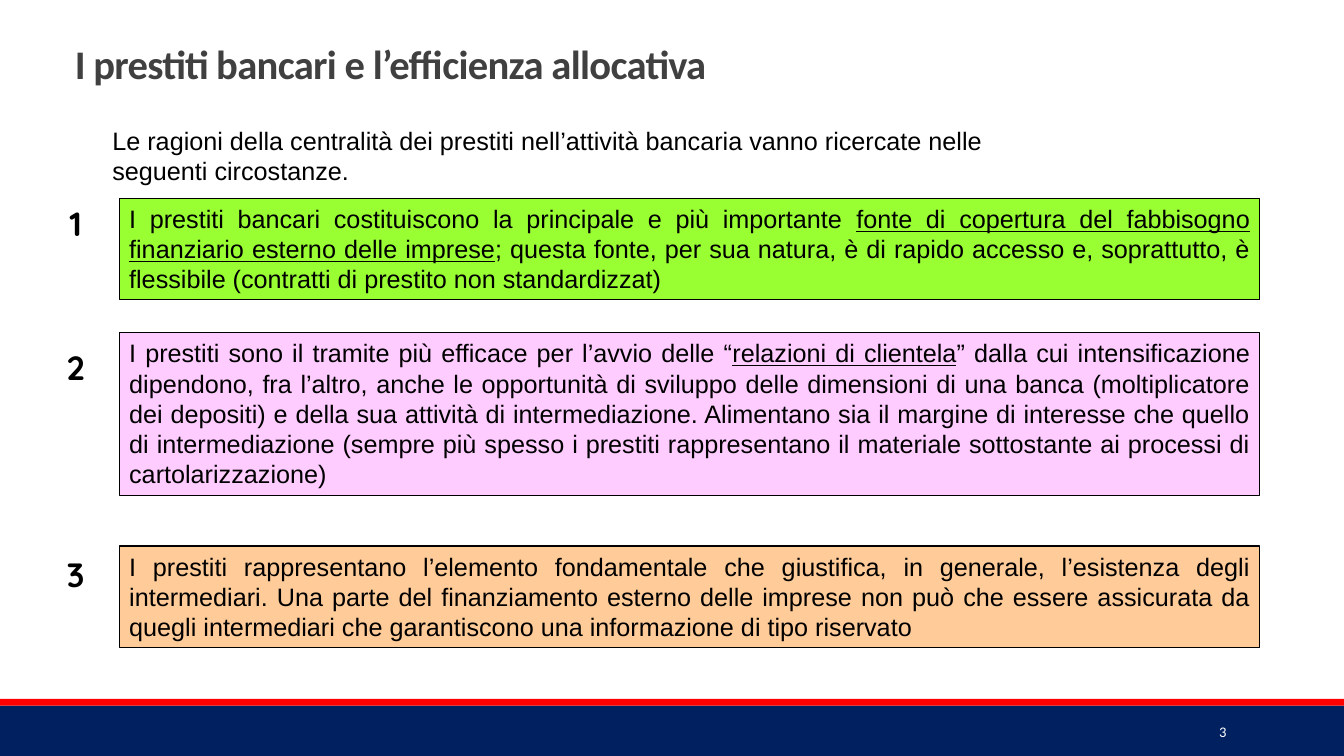
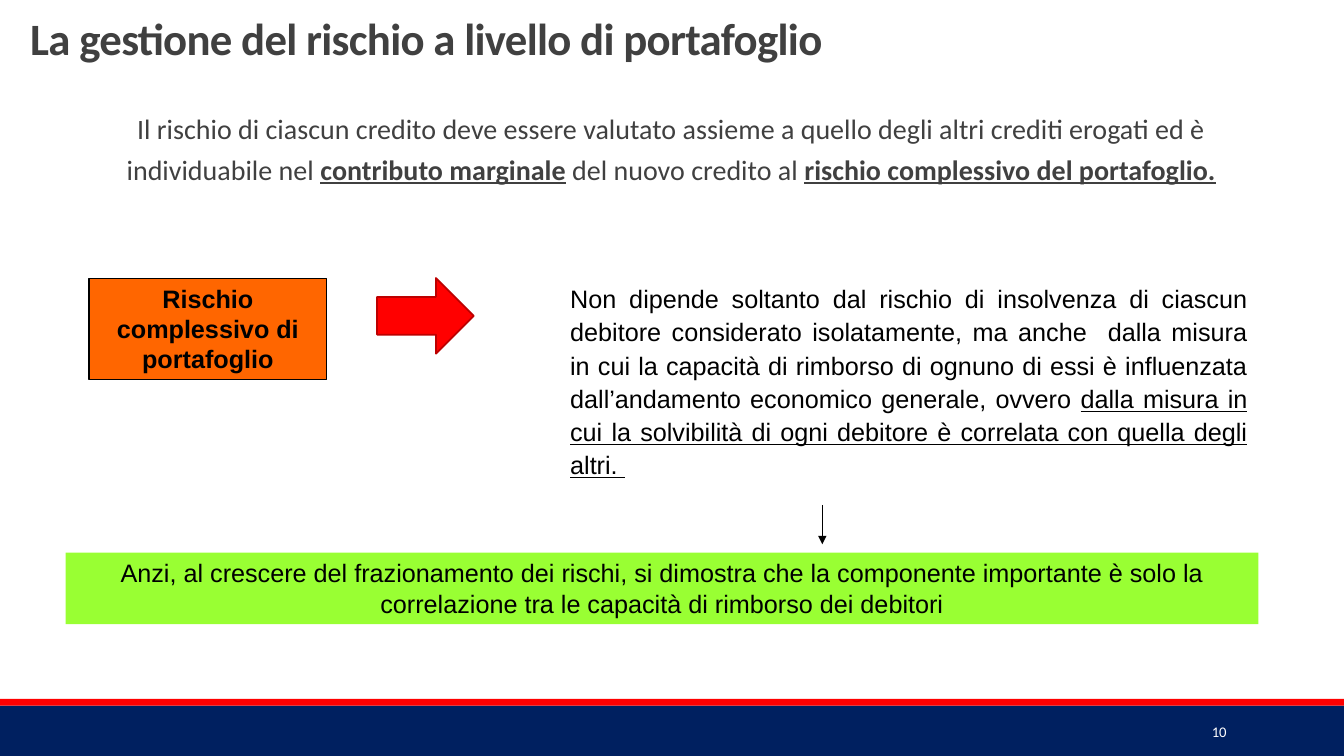
"""Build two slides on bank lending and portfolio risk."""
from dataclasses import dataclass
from typing import Optional

from lxml.etree import SubElement
from pptx import Presentation
from pptx.dml.color import RGBColor
from pptx.enum.shapes import MSO_CONNECTOR, MSO_SHAPE
from pptx.enum.text import MSO_ANCHOR, MSO_AUTO_SIZE, PP_ALIGN
from pptx.oxml.ns import qn
from pptx.slide import Slide
from pptx.text.text import TextFrame
from pptx.util import Inches, Length, Pt

COLUMNS, ROWS = 160, 90
CELLS_PER_INCH = 12
NAVY, RED, DARK_RED = "002060", "FF0000", "BD0000"
GREEN, PINK, PEACH, ORANGE = "99FF33", "FFCCFF", "FFCC99", "FF6600"
BLACK, WHITE, GREY = "000000", "FFFFFF", "404040"


@dataclass(frozen=True)
class Area:
    column: float
    row: float
    columns: float
    rows: float

    def box(self) -> tuple[Length, ...]:
        return tuple(map(cells, (self.column, self.row, self.columns, self.rows)))


@dataclass(frozen=True)
class Span:
    text: str
    underline: bool = False
    bold: bool = False


@dataclass(frozen=True)
class TextStyle:
    size: float = 18
    font: str = "Arial"
    colour: str = BLACK
    bold: bool = False
    align: PP_ALIGN = PP_ALIGN.LEFT
    spacing: float = 1
    anchor: MSO_ANCHOR = MSO_ANCHOR.TOP
    tracking: float = 0


@dataclass(frozen=True)
class Reason:
    row: float
    rows: float
    number_row: float
    fill: str
    spans: tuple[Span, ...]


JUSTIFIED = TextStyle(align=PP_ALIGN.JUSTIFY)
CENTRED = TextStyle(align=PP_ALIGN.CENTER)
NUMERAL = TextStyle(24, "Quicksand", bold=True, align=PP_ALIGN.CENTER)
PAGE_NUMBER = TextStyle(10.5, "Calibri", WHITE, align=PP_ALIGN.RIGHT,
                        anchor=MSO_ANCHOR.MIDDLE)

REASONS = (
    Reason(23.6, 12.1, 23.6, GREEN, (
        Span("I prestiti bancari costituiscono la principale e più importante "),
        Span("fonte di copertura del fabbisogno finanziario esterno delle imprese",
             underline=True),
        Span("; questa fonte, per sua natura, è di rapido accesso e, soprattutto, "
             "è flessibile (contratti di prestito non standardizzat)"))),
    Reason(39.6, 19.4, 40.7, PINK, (
        Span("I prestiti sono il tramite più efficace per l’avvio delle “"),
        Span("relazioni di clientela", underline=True),
        Span("” dalla cui intensificazione dipendono, fra l’altro, anche le "
             "opportunità di sviluppo delle dimensioni di una banca (moltiplicatore "
             "dei depositi) e della sua attività di intermediazione. Alimentano sia "
             "il margine di interesse che quello di intermediazione (sempre più "
             "spesso i prestiti rappresentano il materiale sottostante ai processi "
             "di cartolarizzazione)"))),
    Reason(65, 12.1, 65.3, PEACH, (
        Span("I prestiti rappresentano l’elemento fondamentale che giustifica, in "
             "generale, l’esistenza degli intermediari. Una parte del finanziamento "
             "esterno delle imprese non può che essere assicurata da quegli "
             "intermediari che garantiscono una informazione di tipo riservato"),)),
)


def cells(count: float) -> Length:
    return Inches(count / CELLS_PER_INCH)


def rgb(colour: str) -> RGBColor:
    return RGBColor.from_string(colour)


def write(frame: TextFrame, spans: tuple[Span, ...], style: TextStyle) -> None:
    frame.word_wrap = True
    frame.vertical_anchor = style.anchor
    paragraph = frame.paragraphs[0]
    paragraph.alignment = style.align
    paragraph.line_spacing = style.spacing
    for span in spans:
        run = paragraph.add_run()
        run.text = span.text
        font = run.font
        font.size = Pt(style.size)
        font.name = style.font
        font.color.rgb = rgb(style.colour)
        font.bold = style.bold or span.bold
        font.underline = span.underline
        if style.tracking:
            font._element.set("spc", str(round(style.tracking * 100)))


def add_text(slide: Slide, area: Area, style: TextStyle, *spans: Span) -> None:
    write(slide.shapes.add_textbox(*area.box()).text_frame, spans, style)


def add_panel(slide: Slide, area: Area, fill: str, outline: Optional[str] = None,
              weight: float = 0.75, kind: MSO_SHAPE = MSO_SHAPE.RECTANGLE,
              style: TextStyle = CENTRED, spans: tuple[Span, ...] = ()):
    panel = slide.shapes.add_shape(kind, *area.box())
    panel.shadow.inherit = False
    panel.fill.solid()
    panel.fill.fore_color.rgb = rgb(fill)
    if outline:
        panel.line.color.rgb = rgb(outline)
        panel.line.width = Pt(weight)
    else:
        panel.line.fill.background()
    if spans:
        write(panel.text_frame, spans, style)
        panel.text_frame.auto_size = MSO_AUTO_SIZE.SHAPE_TO_FIT_TEXT
    return panel


def add_down_arrow(slide: Slide, column: float, top: float, bottom: float) -> None:
    arrow = slide.shapes.add_connector(
        MSO_CONNECTOR.STRAIGHT, *map(cells, (column, top, column, bottom)))
    arrow.line.color.rgb = rgb(BLACK)
    arrow.line.width = Pt(0.75)
    properties = arrow.element.spPr
    SubElement(properties.find(qn("a:ln")), qn("a:tailEnd"), type="triangle")
    SubElement(properties, qn("a:effectLst"))


def fill_placeholder(placeholder, area: Area, style: TextStyle, *spans: Span) -> None:
    placeholder.left, placeholder.top, placeholder.width, placeholder.height = area.box()
    write(placeholder.text_frame, spans, style)
    placeholder.text_frame.auto_size = MSO_AUTO_SIZE.NONE


def add_heading(slide: Slide, text: str, area: Area, size: float, anchor: MSO_ANCHOR) -> None:
    style = TextStyle(size, "Calibri", GREY, bold=True, spacing=0.85,
                      anchor=anchor, tracking=-0.5)
    fill_placeholder(slide.shapes.title, area, style, Span(text))


def add_page_number(slide: Slide, number: int) -> None:
    add_text(slide, Area(130, 84.7, 17.2, 4.8), PAGE_NUMBER, Span(str(number)))


def move_bands_to_master(slide: Slide) -> None:
    bands = ((Area(0, 84, COLUMNS, 6), NAVY), (Area(0, 83.2, COLUMNS, 0.8), RED))
    master_tree = slide.slide_layout.slide_master.shapes.element
    for order, (area, colour) in enumerate(bands):
        band = add_panel(slide, area, colour).element
        band.nvSpPr.cNvPr.set("id", str(100 + order))
        master_tree.insert(2 + order, band)


def build_allocation(slide: Slide) -> None:
    add_page_number(slide, 3)
    add_heading(slide, "I prestiti bancari e l’efficienza allocativa",
                Area(7.7, 1.8, 108, 9.2), 29, MSO_ANCHOR.BOTTOM)
    add_text(slide, Area(12.2, 14.3, 106.8, 8.4), TextStyle(),
             Span("Le ragioni della centralità dei prestiti nell’attività bancaria "
                  "vanno ricercate nelle seguenti circostanze."))
    for number, reason in enumerate(REASONS, start=1):
        add_panel(slide, Area(14.2, reason.row, 135.8, reason.rows), reason.fill,
                  BLACK, style=JUSTIFIED, spans=reason.spans)
        add_text(slide, Area(5.2, reason.number_row, 7.6, 6), NUMERAL, Span(str(number)))


def build_portfolio(slide: Slide) -> None:
    add_page_number(slide, 10)
    add_heading(slide, "La gestione del rischio a livello di portafoglio",
                Area(2.4, 1.7, 108, 10.2), 32, MSO_ANCHOR.TOP)
    premise = slide.placeholders[1]
    fill_placeholder(
        premise, Area(12.7, 11.9, 134.4, 15.1),
        TextStyle(20, "Calibri", GREY, align=PP_ALIGN.CENTER, spacing=1.2),
        Span("Il rischio di ciascun credito deve essere valutato assieme a quello "
             "degli altri crediti erogati ed è individuabile nel "),
        Span("contributo marginale", underline=True, bold=True),
        Span(" del nuovo credito al "),
        Span("rischio complessivo del portafoglio.", underline=True, bold=True))
    premise.text_frame.margin_left = premise.text_frame.margin_right = 0
    paragraph = premise.text_frame.paragraphs[0]._p.get_or_add_pPr()
    paragraph.set("marL", "0")
    paragraph.set("indent", "0")
    SubElement(paragraph, qn("a:buNone"))

    add_panel(slide, Area(10.6, 33.1, 28.3, 12.1), ORANGE, BLACK,
              spans=(Span("Rischio complessivo di portafoglio", bold=True),))
    add_text(slide, Area(66.7, 32.8, 83, 25.2),
             TextStyle(align=PP_ALIGN.JUSTIFY, spacing=1.1),
             Span("Non dipende soltanto dal rischio di insolvenza di ciascun debitore "
                  "considerato isolatamente, ma anche  dalla misura in cui la capacità "
                  "di rimborso di ognuno di essi è influenzata dall’andamento economico "
                  "generale, ovvero "),
             Span("dalla misura in cui la solvibilità di ogni debitore è correlata con "
                  "quella degli altri. ", underline=True))
    add_down_arrow(slide, 97.9, 60.1, 64.8)
    add_panel(slide, Area(7.8, 65.8, 142, 8.5), GREEN,
              spans=(Span("Anzi, al crescere del frazionamento dei rischi, si dimostra "
                          "che la componente importante è solo la correlazione tra le "
                          "capacità di rimborso dei debitori"),))
    add_panel(slide, Area(44.9, 33.1, 11.5, 9), RED, DARK_RED, 1.25,
              MSO_SHAPE.RIGHT_ARROW)


def main() -> None:
    deck = Presentation()
    deck.slide_width, deck.slide_height = cells(COLUMNS), cells(ROWS)
    title_and_content, title_only = deck.slide_layouts[1], deck.slide_layouts[5]
    allocation = deck.slides.add_slide(title_only)
    move_bands_to_master(allocation)
    build_allocation(allocation)
    build_portfolio(deck.slides.add_slide(title_and_content))
    deck.save("out.pptx")


if __name__ == "__main__":
    main()
